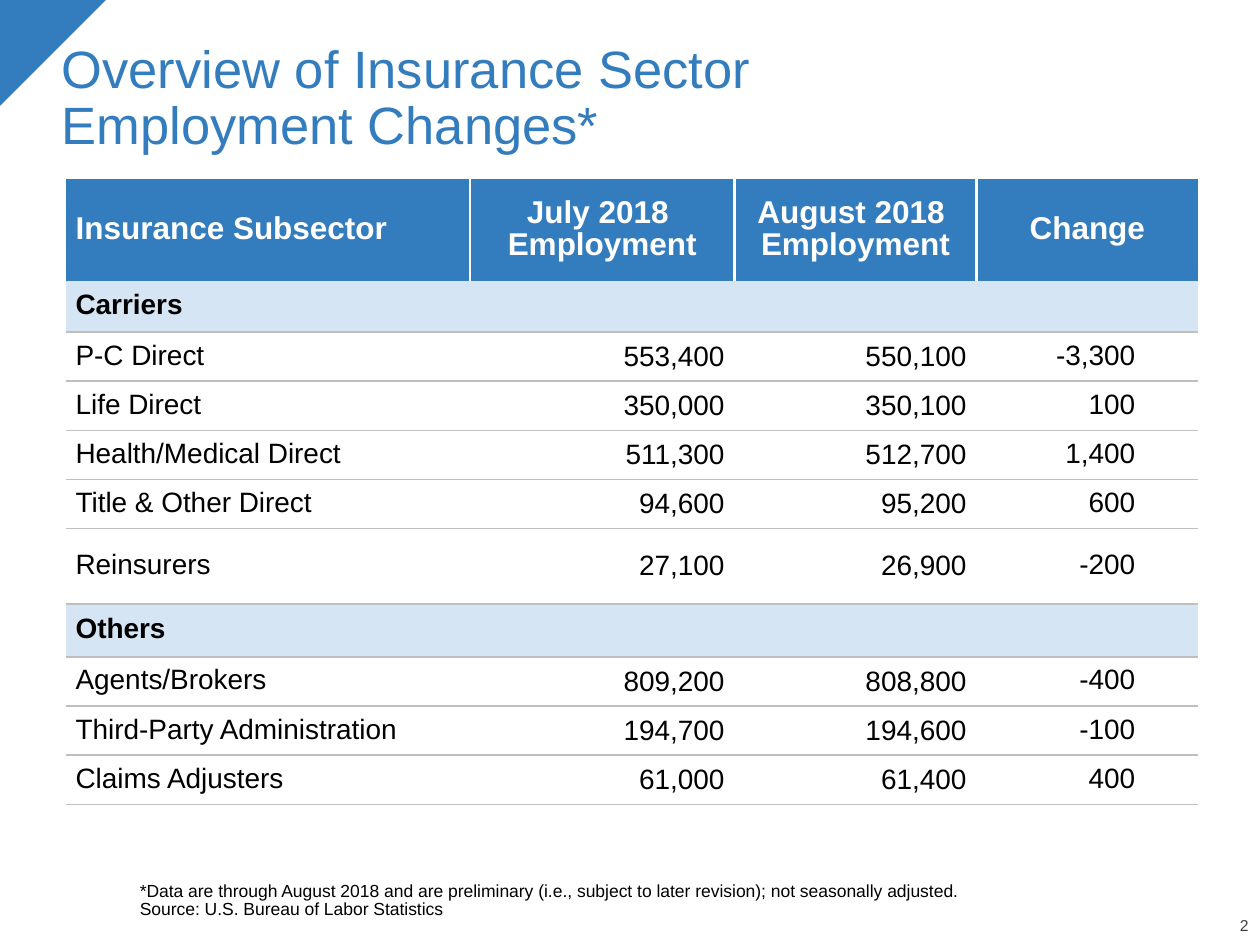
from dataclasses import dataclass

from lxml import etree
from pptx import Presentation
from pptx.dml.color import RGBColor
from pptx.enum.shapes import MSO_SHAPE
from pptx.enum.text import MSO_ANCHOR, PP_ALIGN
from pptx.oxml.ns import qn
from pptx.util import Inches, Pt

LEFT, CENTER, RIGHT = PP_ALIGN.LEFT, PP_ALIGN.CENTER, PP_ALIGN.RIGHT
MIDDLE, BOTTOM = MSO_ANCHOR.MIDDLE, MSO_ANCHOR.BOTTOM
RIGHT_TRIANGLE = MSO_SHAPE.RIGHT_TRIANGLE


@dataclass(frozen=True)
class Theme:
    font: str = "Arial"
    blue: str = "337DBE"
    pale_blue: str = "D5E5F4"
    rule: str = "BFBFBF"
    white: str = "FFFFFF"
    black: str = "000000"
    gray: str = "404040"
    title_size: int = 30
    header_size: int = 18
    body_size: int = 16
    note_size: int = 10
    number_size: int = 9
    line_spacing: float = 0.9


HEADERS = ["Insurance Subsector", "July 2018 \nEmployment",
           "August 2018 \nEmployment", "Change"]
SECTIONS = {
    "Carriers": [
        ("P-C Direct", "553,400", "550,100", "-3,300"),
        ("Life Direct", "350,000", "350,100", "100"),
        ("Health/Medical Direct", "511,300", "512,700", "1,400"),
        ("Title & Other Direct", "94,600", "95,200", "600"),
        ("Reinsurers", "27,100", "26,900", "-200"),
    ],
    "Others": [
        ("Agents/Brokers", "809,200", "808,800", "-400"),
        ("Third-Party Administration", "194,700", "194,600", "-100"),
        ("Claims Adjusters", "61,000", "61,400", "400"),
    ],
}
COLUMN_WIDTHS = [3.21, 2.1, 1.92, 1.76]
ROW_HEIGHT = 0.39
SPECIAL_HEIGHTS = {HEADERS[0]: 0.81, "Reinsurers": 0.6, "Others": 0.42}


class SlideBuilder:
    def __init__(self, page, theme):
        self.page = page
        self.theme = theme

    def fill_text(self, frame, text, size, color, align=LEFT, bold=False,
                  spacing=None):
        """Fill a text frame and format each of its paragraphs."""
        frame.text = text
        paragraph_format = {"alignment": align,
                            "line_spacing": spacing or self.theme.line_spacing}
        font_format = {"name": self.theme.font, "size": Pt(size), "bold": bold}
        for para in frame.paragraphs:
            for name, value in paragraph_format.items():
                setattr(para, name, value)
            for span in para.runs:
                for name, value in font_format.items():
                    setattr(span.font, name, value)
                span.font.color.rgb = RGBColor.from_string(color)

    def title(self, text, left, top, width, height):
        box = self.page.shapes.title
        place = {"left": left, "top": top, "width": width, "height": height}
        for name, value in place.items():
            setattr(box, name, Inches(value))
        box.text_frame.vertical_anchor = BOTTOM
        self.fill_text(box.text_frame, text, self.theme.title_size,
                       self.theme.blue)

    def corner(self, side):
        shape = self.page.shapes.add_shape(
            RIGHT_TRIANGLE, 0, 0, Inches(side), Inches(side))
        shape.rotation = 90
        shape.shadow.inherit = False
        shape.fill.solid()
        shape.fill.fore_color.rgb = RGBColor.from_string(self.theme.blue)
        shape.line.fill.background()

    def text(self, text, left, top, width, height, **style):
        box = self.page.shapes.add_textbox(
            *map(Inches, (left, top, width, height)))
        frame = box.text_frame
        frame_format = {"word_wrap": True, "vertical_anchor": BOTTOM,
                        "margin_left": 0, "margin_right": 0,
                        "margin_top": 0, "margin_bottom": 0}
        for name, value in frame_format.items():
            setattr(frame, name, value)
        self.fill_text(frame, text, **style)

    def borders(self, cell, lines):
        """Draw the given sides of a cell and clear the others."""
        properties = cell._tc.get_or_add_tcPr()
        for side in "LRTB":
            line = etree.SubElement(properties, qn(f"a:ln{side}"))
            if side in lines:
                color, width = lines[side]
                line.set("w", str(Pt(width)))
                fill = etree.SubElement(line, qn("a:solidFill"))
                etree.SubElement(fill, qn("a:srgbClr"), val=color)
            else:
                etree.SubElement(line, qn("a:noFill"))

    def cell(self, cell, text, lines, fill=None, right=0.08, **style):
        self.borders(cell, lines)
        if fill:
            cell.fill.solid()
            cell.fill.fore_color.rgb = RGBColor.from_string(fill)
        else:
            cell.fill.background()
        cell_format = {"vertical_anchor": MIDDLE, "margin_left": Inches(0.08),
                       "margin_right": Inches(right)}
        for name, value in cell_format.items():
            setattr(cell, name, value)
        if text:
            self.fill_text(cell.text_frame, text, **style)

    def table(self, left, top):
        theme = self.theme
        rows = [HEADERS]
        for section, records in SECTIONS.items():
            rows += [(section, "", "", ""), *records]
        heights = [SPECIAL_HEIGHTS.get(row[0], ROW_HEIGHT) for row in rows]
        table = self.page.shapes.add_table(
            len(rows), len(COLUMN_WIDTHS), Inches(left), Inches(top),
            Inches(sum(COLUMN_WIDTHS)), Inches(sum(heights))).table
        table.first_row = table.horz_banding = False
        for column, width in zip(table.columns, COLUMN_WIDTHS):
            column.width = Inches(width)
        for row, height in zip(table.rows, heights):
            row.height = Inches(height)

        last = len(COLUMN_WIDTHS) - 1
        # Header row, with white rules between the columns
        for index, text in enumerate(HEADERS):
            sides = ("L" if index else "") + ("R" if index < last else "")
            self.cell(table.cell(0, index), text,
                      {side: (theme.white, 1.5) for side in sides},
                      fill=theme.blue, size=theme.header_size,
                      color=theme.white, bold=True,
                      align=CENTER if index else LEFT)
        # Section bands and data rows, with gray rules between the rows
        for number, row in enumerate(rows[1:], start=1):
            band = row[0] in SECTIONS
            sides = "B" if number == 1 else "TB"
            for index, text in enumerate(row):
                self.cell(table.cell(number, index), text,
                          {side: (theme.rule, 1) for side in sides},
                          fill=theme.pale_blue if band else None,
                          right=0.5 if index == last else 0.08,
                          size=theme.body_size, color=theme.black, bold=band,
                          align=RIGHT if index else LEFT,
                          spacing=1.0 if 0 < index < last else None)


def main():
    deck = Presentation()
    deck.slide_width, deck.slide_height = Inches(10), Inches(7.5)
    theme = Theme()
    builder = SlideBuilder(deck.slides.add_slide(deck.slide_layouts[5]), theme)

    # Corner and title
    builder.corner(0.84)
    builder.title("Overview of Insurance Sector \vEmployment Changes*",
                  0.39, 0.25, 9.25, 1.04)
    # Employment figures
    builder.table(0.52, 1.42)
    # Footnote and page number
    builder.text("*Data are through August 2018 and are preliminary (i.e., "
                 "subject to later revision); not seasonally adjusted.\v"
                 "Source: U.S. Bureau of Labor Statistics",
                 1.11, 6.85, 8.4, 0.45,
                 size=theme.note_size, color=theme.black)
    builder.text("2", 9.43, 7.29, 0.48, 0.13,
                 size=theme.number_size, color=theme.gray, align=RIGHT)
    deck.save("out.pptx")


if __name__ == "__main__":
    main()
